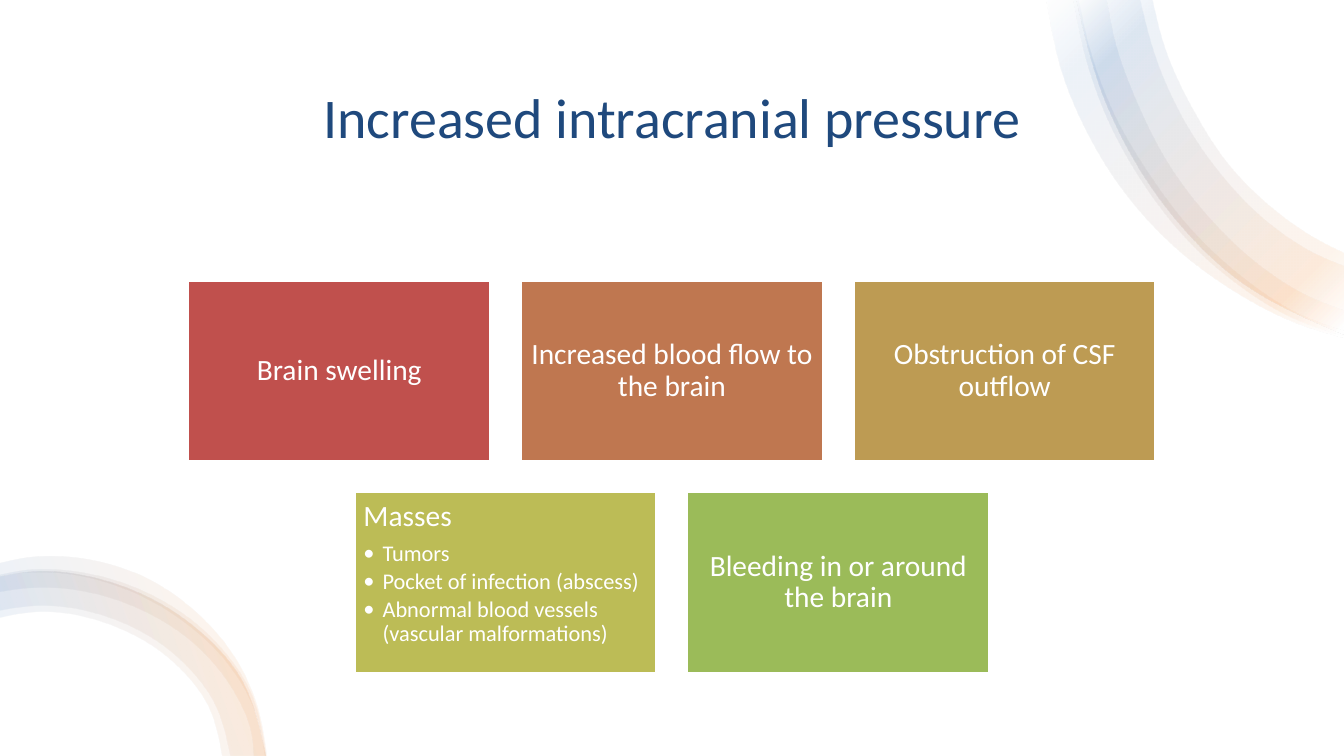
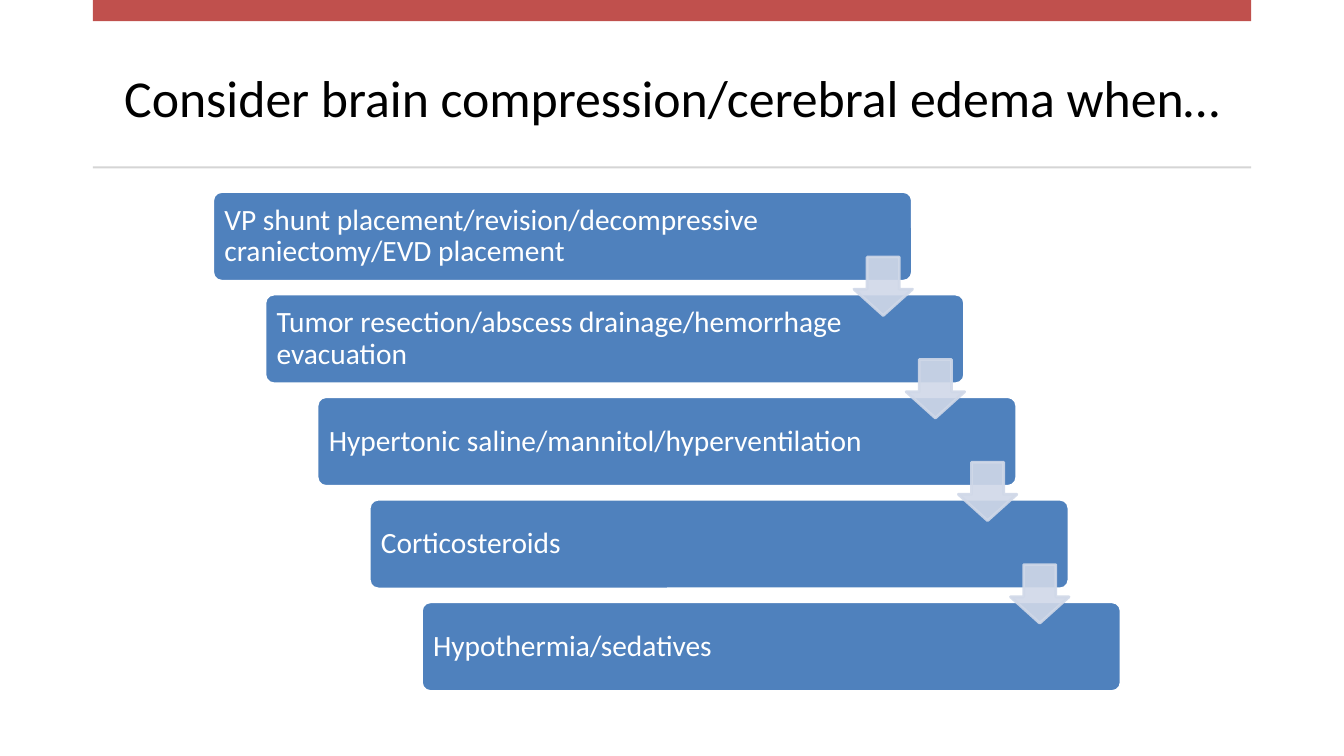
from math import dist

from lxml import etree
from pptx import Presentation
from pptx.dml import color
from pptx.enum import shapes, text
from pptx.oxml import ns
from pptx.util import Inches, Pt

COLORS = {
    "white": "FFFFFF", "black": "000000", "navy": "1F497D", "blue": "4F81BD",
    "orange": "F79646", "red": "C0504D", "copper": "BF7750", "ochre": "BD9B53",
    "olive": "BCBC56", "green": "9BBB59", "rule": "D5D5D5", "arrow": "D0D8E8",
}
FONT = "Calibri"
SLIDE_W, SLIDE_H = 13.33, 7.5
LEFT, MIDDLE = text.PP_ALIGN.LEFT, text.MSO_ANCHOR.MIDDLE
CENTER, TOP = text.PP_ALIGN.CENTER, text.MSO_ANCHOR.TOP
RECT = shapes.MSO_SHAPE.RECTANGLE

# Edges of the swooshes, as nodes of a smooth curve
CORNER_EDGE = [(10.68, 0), (10.99, 1.07), (11.52, 2), (12.23, 2.74), (13.33, 3.32)]
FOOT_EDGE = [(0, 5.72), (0.4, 5.67), (1.17, 5.8), (1.85, 6.16),
             (2.36, 6.69), (2.63, 7.5)]

# Each band: outer edge, then inner edge running back
CORNER_BANDS = [
    ([(10.38, 0), (10.56, 0.8), (10.78, 1.31), (11.16, 1.92),
      (11.65, 2.45), (12.21, 2.87), (12.82, 3.19), (13.33, 3.35)],
     [(13.33, 3.28), (12.86, 3.1), (12.3, 2.73), (11.81, 2.27), (11.4, 1.73),
      (11.06, 1.15), (10.82, 0.52), (10.7, 0)]),
    (CORNER_EDGE,
     [(13.33, 2.51), (13.07, 2.38), (12.61, 2.06), (12.19, 1.64),
      (11.85, 1.12), (11.58, 0.55), (11.43, 0)]),
    ([(10.65, 0), (10.81, 0.71), (10.99, 1.19), (11.32, 1.79),
      (11.73, 2.33), (12.23, 2.79), (12.79, 3.14), (13.33, 3.33)],
     [(13.33, 3.08), (12.9, 2.9), (12.39, 2.55), (11.95, 2.11), (11.58, 1.61),
      (11.29, 1.04), (11.07, 0.44), (10.98, 0)]),
    (CORNER_EDGE,
     [(13.33, 2.64), (13.01, 2.5), (12.53, 2.17), (12.1, 1.72),
      (11.74, 1.19), (11.47, 0.59), (11.31, 0)]),
]
FOOT_BANDS = [
    (FOOT_EDGE, [(2.2, 7.5), (2.06, 7), (1.66, 6.52), (1.07, 6.19),
                 (0.4, 6.07), (0, 6.13)]),
    (FOOT_EDGE, [(2.28, 7.5), (2.12, 6.97), (1.7, 6.47), (1.09, 6.13),
                 (0.4, 6.01), (0, 6.06)]),
    ([(0, 5.71), (0.31, 5.66), (0.69, 5.67), (1.42, 5.87), (2.03, 6.27),
      (2.47, 6.85), (2.63, 7.5)],
     [(2.51, 7.5), (2.47, 7.21), (2.34, 6.91), (1.92, 6.39), (1.34, 6.03),
      (0.67, 5.85), (0.33, 5.84), (0, 5.88)]),
    ([(0, 5.59), (0.31, 5.53), (0.71, 5.53), (1.48, 5.75), (1.96, 6.09),
      (2.33, 6.53), (2.5, 6.87), (2.64, 7.5)],
     [(2.62, 7.5), (2.52, 7.05), (2.25, 6.58), (1.82, 6.17), (1.39, 5.91),
      (0.69, 5.7), (0.32, 5.68), (0, 5.72)]),
]

CAUSES = [
    [("Brain swelling", "red"), ("Increased blood flow to the brain", "copper"),
     ("Obstruction of CSF outflow", "ochre")],
    [("Masses", "olive"), ("Bleeding in or around the brain", "green")],
]
MASS_KINDS = ["Tumors", "Pocket of infection (abscess)",
              "Abnormal blood vessels (vascular malformations)"]
STEPS = [
    "VP shunt placement/revision/decompressive craniectomy/EVD placement",
    "Tumor resection/abscess drainage/hemorrhage evacuation",
    "Hypertonic saline/mannitol/hyperventilation",
    "Corticosteroids",
    "Hypothermia/sedatives",
]


def rgb(name):
    return color.RGBColor.from_string(COLORS[name])


def add_alpha(parent, percent):
    for srgb in parent.iter(ns.qn("a:srgbClr")):
        etree.SubElement(srgb, ns.qn("a:alpha"), val=str(percent * 1000))


# Text
def write(paragraph, words, size, ink="white", align=LEFT):
    paragraph.alignment = align
    run = paragraph.add_run()
    run.text = words
    run.font.name, run.font.size = FONT, Pt(size)
    run.font.color.rgb = rgb(ink)


def write_label(paragraph, words, size, align=LEFT, after=7):
    write(paragraph, words, size, align=align)
    paragraph.line_spacing = 0.9
    paragraph.space_after = Pt(after)


def add_bullet(frame, words):
    paragraph = frame.add_paragraph()
    write_label(paragraph, words, 16, after=2.5)
    props = paragraph._p.get_or_add_pPr()
    props.set("marL", str(Inches(0.19)))
    props.set("indent", str(-Inches(0.19)))
    etree.SubElement(props, ns.qn("a:buFont"), typeface=FONT)
    etree.SubElement(props, ns.qn("a:buChar"), char="•")


def add_title(slide, words, box, size, ink):
    frame = slide.shapes.add_textbox(*map(Inches, box)).text_frame
    frame.word_wrap = True
    frame.vertical_anchor = MIDDLE
    write(frame.paragraphs[0], words, size, ink, CENTER)


# Shapes
def add_block(slide, kind, box, fill, line=None):
    block = slide.shapes.add_shape(kind, *map(Inches, box))
    block.shadow.inherit = False
    block.fill.solid()
    block.fill.fore_color.rgb = rgb(fill)
    if line:
        block.line.color.rgb = rgb(line)
        block.line.width = Pt(2)
    else:
        block.line.fill.background()
    return block


def label_frame(block, anchor=MIDDLE, right=0.09):
    frame = block.text_frame
    frame.word_wrap = True
    frame.vertical_anchor = anchor
    frame.margin_left = frame.margin_top = frame.margin_bottom = Inches(0.09)
    frame.margin_right = Inches(right)
    return frame


def curve_controls(nodes):
    """Two Bézier control points for each stretch between nodes."""
    lengths = [dist(a, b) for a, b in zip(nodes, nodes[1:])]
    slopes = [tuple((q - p) / length for p, q in zip(a, b))
              for a, b, length in zip(nodes, nodes[1:], lengths)]
    inner = [tuple((p * n + q * m) / (m + n) for p, q in zip(a, b))
             for a, b, m, n in zip(slopes, slopes[1:], lengths, lengths[1:])]
    first = tuple(1.5 * p - q / 2 for p, q in zip(slopes[0], inner[0]))
    last = tuple(1.5 * p - q / 2 for p, q in zip(slopes[-1], inner[-1]))
    tangents = [first, *inner, last]
    return [(tuple(p + t * length / 3 for p, t in zip(a, ta)),
             tuple(p - t * length / 3 for p, t in zip(b, tb)))
            for a, b, ta, tb, length
            in zip(nodes, nodes[1:], tangents, tangents[1:], lengths)]


def bend(band, controls):
    """Turn the straight stretches of a band into curves."""
    lines = list(band._element.iter(ns.qn("a:lnTo")))
    for line, pair in zip(lines, controls):
        if pair is None:
            continue
        line.tag = ns.qn("a:cubicBezTo")
        for place, (x, y) in enumerate(pair):
            point = etree.Element(ns.qn("a:pt"), x=str(Inches(x) - band.left),
                                  y=str(Inches(y) - band.top))
            line.insert(place, point)


def add_swoosh(slide, bands, angle):
    for outer, inner in bands:
        outline = [tuple(map(Inches, node)) for node in outer + inner]
        builder = slide.shapes.build_freeform(*outline[0])
        builder.add_line_segments(outline[1:], close=True)
        band = builder.convert_to_shape()
        bend(band, curve_controls(outer) + [None] + curve_controls(inner))
        band.shadow.inherit = False
        band.line.fill.background()
        band.fill.gradient()
        band.fill.gradient_angle = 360 - angle
        stops = band._element.spPr.find(".//" + ns.qn("a:gsLst"))
        for old in list(stops):
            stops.remove(old)
        for place, name in ((2, "white"), (16, "orange"), (85, "blue"), (100, "white")):
            stop = etree.SubElement(stops, ns.qn("a:gs"), pos=str(place * 1000))
            etree.SubElement(stop, ns.qn("a:srgbClr"), val=COLORS[name])
        add_alpha(stops, 10)


# Slides
def build_causes(slide):
    add_block(slide, RECT, (0, 0, SLIDE_W, SLIDE_H), "white")
    add_title(slide, "Increased intracranial pressure", (0.88, 0.5, 11.57, 1.3), 40, "navy")
    add_swoosh(slide, CORNER_BANDS, 225)
    add_swoosh(slide, FOOT_BANDS, 160)
    width, height, gap = 3, 1.8, 0.3
    for row, causes in enumerate(CAUSES):
        left = (SLIDE_W - len(causes) * (width + gap) + gap) / 2
        for col, (cause, fill) in enumerate(causes):
            box = (left + col * (width + gap), 2.78 + row * (height + gap), width, height)
            card = add_block(slide, RECT, box, fill, "white")
            has_list = cause == "Masses"
            frame = label_frame(card, TOP if has_list else MIDDLE)
            write_label(frame.paragraphs[0], cause, 21, LEFT if has_list else CENTER)
            if has_list:
                for kind in MASS_KINDS:
                    add_bullet(frame, kind)


def build_staircase(slide):
    left, width = 0.92, 11.49
    add_title(slide, "Consider brain compression/cerebral edema when…",
              (left, 0.37, width, 1.18), 37, "black")
    add_block(slide, RECT, (left, 0, width, 0.21), "red")
    add_block(slide, RECT, (left, 1.65, width, 0.02), "rule")

    step_w, step_h, arrow_size = 6.94, 0.89, 0.58
    first_x, first_y, last_x, last_y = 2.11, 1.9, 4.18, 5.97
    gaps = len(STEPS) - 1
    corners = [(first_x + (last_x - first_x) * i / gaps,
                first_y + (last_y - first_y) * i / gaps) for i in range(len(STEPS))]
    for (x, y), words in zip(corners, STEPS):
        step = add_block(slide, shapes.MSO_SHAPE.ROUNDED_RECTANGLE,
                         (x, y, step_w, step_h), "blue", "white")
        step.adjustments[0] = 0.1
        frame = label_frame(step, right=1.1)
        write_label(frame.paragraphs[0], words, 21)
    for x, y in corners[:-1]:
        arrow = add_block(slide, shapes.MSO_SHAPE.DOWN_ARROW,
                          (x + step_w - arrow_size, y + 0.65, arrow_size, arrow_size),
                          "arrow", "arrow")
        arrow.adjustments[0], arrow.adjustments[1] = 0.55, 0.45
        add_alpha(arrow._element.spPr, 90)


def main():
    deck = Presentation()
    deck.slide_width, deck.slide_height = Inches(SLIDE_W), Inches(SLIDE_H)
    for build in (build_causes, build_staircase):
        build(deck.slides.add_slide(deck.slide_layouts[6]))
    deck.save("out.pptx")


if __name__ == "__main__":
    main()
